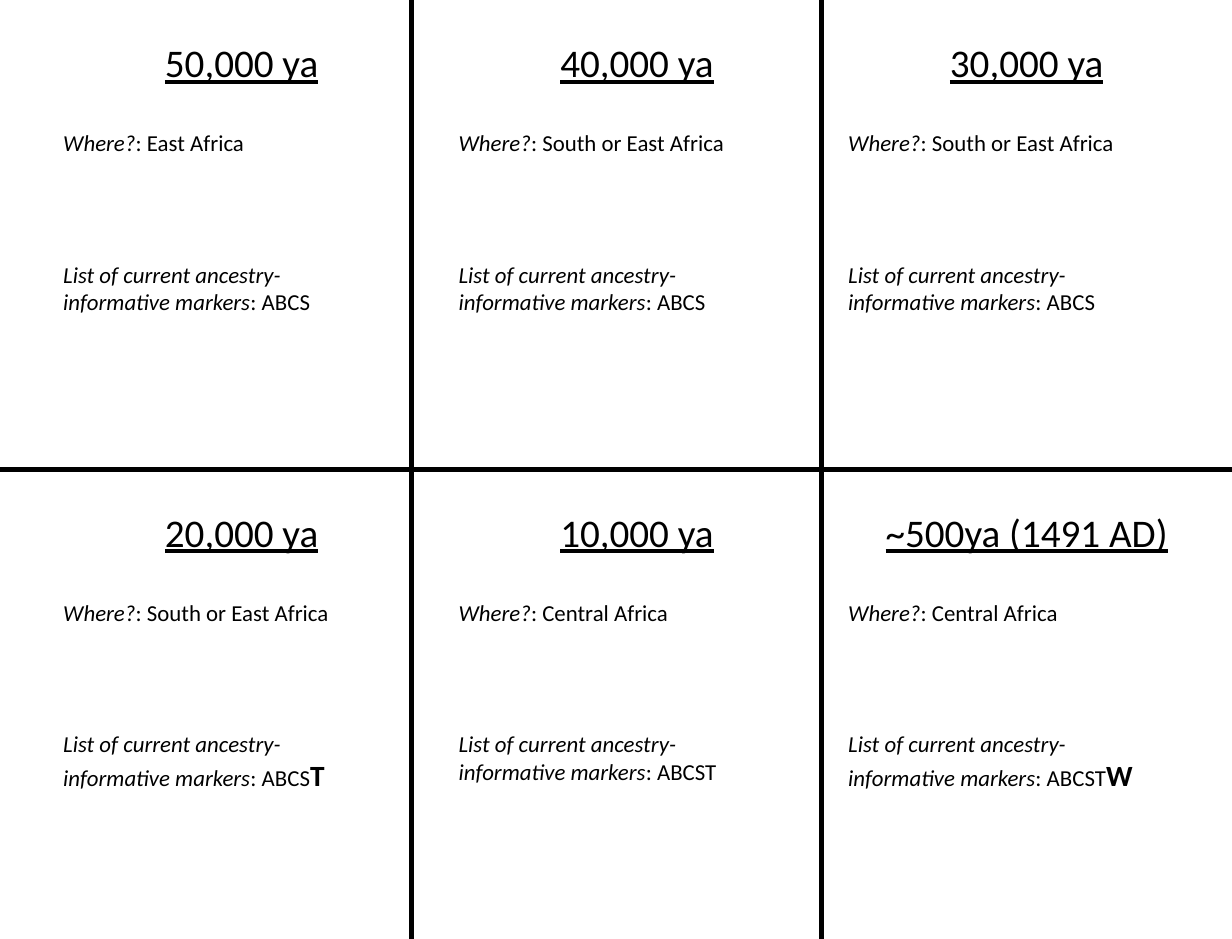
from lxml.etree import SubElement
from pptx import Presentation
from pptx.dml.color import RGBColor
from pptx.enum.shapes import MSO_CONNECTOR
from pptx.enum.text import MSO_AUTO_SIZE, PP_ALIGN
from pptx.oxml.ns import qn
from pptx.util import Pt

BLACK = RGBColor(0, 0, 0)
WIDTH, HEIGHT = 756, 576
ROW_HEIGHT = HEIGHT / 2
COLUMN_LEFTS = [31.7, 274.3, 513.4]

HEADING = {"size": Pt(24), "underline": True}
LABEL = {"size": Pt(14), "italic": True}
ANSWER = {"size": Pt(14)}
NEW_MARKER = {"size": Pt(18), "bold": True}

# Date, place, markers so far, newly gained marker
PERIODS = [
    ("50,000 ya", "East Africa", "ABCS", ""),
    ("40,000 ya", "South or East Africa", "ABCS", ""),
    ("30,000 ya", "South or East Africa", "ABCS", ""),
    ("20,000 ya", "South or East Africa", "ABCS", "T"),
    ("10,000 ya", "Central Africa", "ABCST", ""),
    ("~500ya (1491 AD)", "Central Africa", "ABCST", "W"),
]

deck = Presentation()
deck.slide_width, deck.slide_height = Pt(WIDTH), Pt(HEIGHT)
page = deck.slides.add_slide(deck.slide_layouts[6])


def add_text(left, top, width, height, spans, align=PP_ALIGN.LEFT):
    """Add a one-paragraph box from (text, format) pairs, skipping empty text."""
    box = page.shapes.add_textbox(Pt(left), Pt(top), Pt(width), Pt(height))
    frame = box.text_frame
    frame.word_wrap = True
    frame.auto_size = MSO_AUTO_SIZE.SHAPE_TO_FIT_TEXT
    para = frame.paragraphs[0]
    para.alignment = align
    for text, look in spans:
        if text:
            span = para.add_run()
            span.text = text
            span.font.color.rgb = BLACK
            for name, value in {"name": "Calibri", **look}.items():
                setattr(span.font, name, value)


dividers = [
    (0, ROW_HEIGHT, WIDTH, ROW_HEIGHT),
    (252.7, 0, 252.7, HEIGHT),
    (504, 0, 504, HEIGHT),
]
for ends in dividers:
    divider = page.shapes.add_connector(MSO_CONNECTOR.STRAIGHT, *map(Pt, ends))
    divider.line.color.rgb = BLACK
    divider.line.width = Pt(3)
    SubElement(divider._element.spPr, qn("a:effectLst"))

for index, (date, place, markers, new_marker) in enumerate(PERIODS):
    row, column = divmod(index, 3)
    left, top = COLUMN_LEFTS[column], row * ROW_HEIGHT
    add_text(left, top + 20.2, 233.3, 36.3, [(date, HEADING)], PP_ALIGN.CENTER)
    add_text(left, top + 75.6, 205.2, 24.2,
             [("Where?", LABEL), (f": {place}", ANSWER)])
    add_text(left, top + 156.2, 205.2, 46 if new_marker else 41.2,
             [("List of current ancestry-informative markers", LABEL),
              (f": {markers}", ANSWER), (new_marker, NEW_MARKER)])

deck.save("out.pptx")
